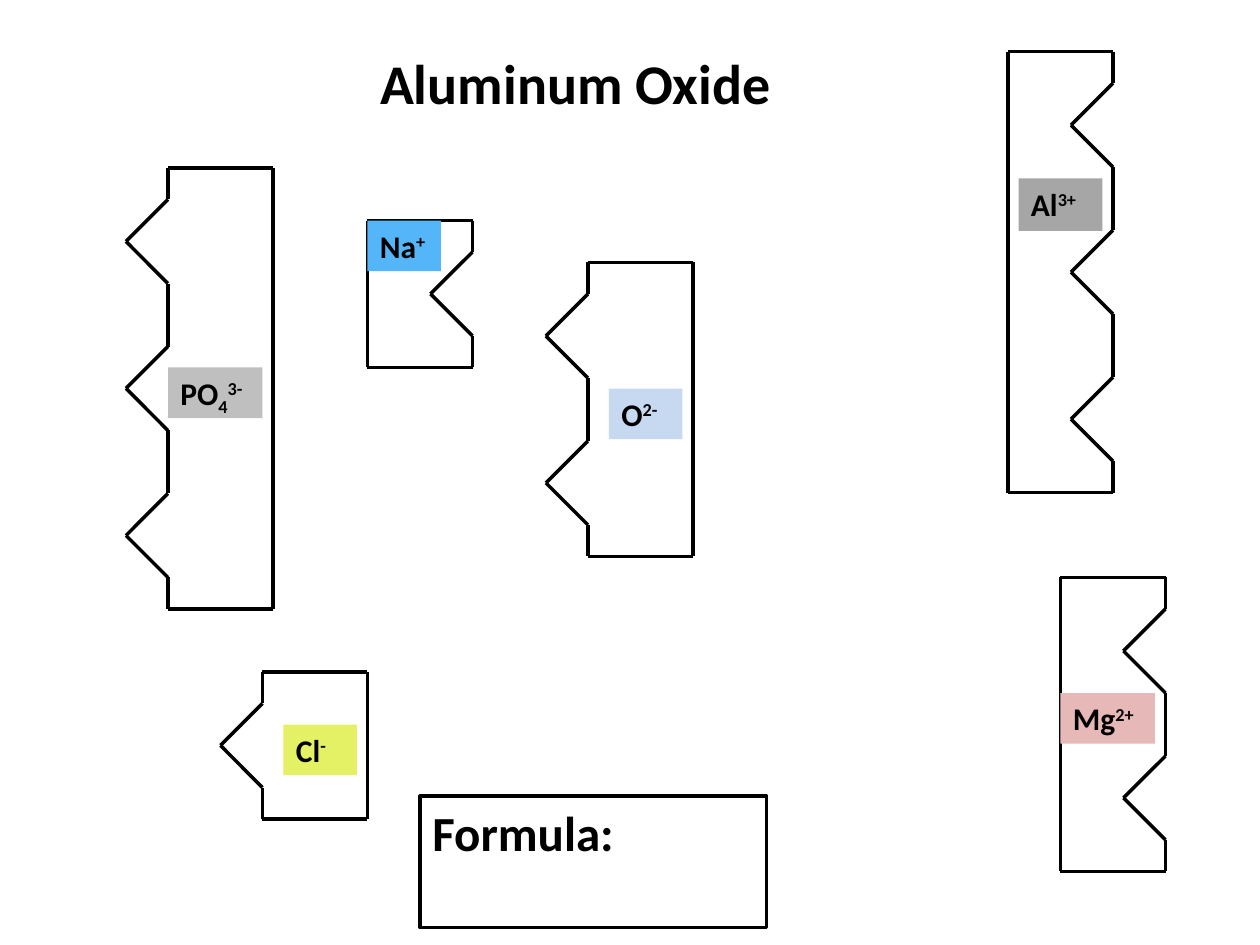
from lxml import etree
from pptx import Presentation
from pptx.dml.color import RGBColor
from pptx.enum.shapes import MSO_CONNECTOR
from pptx.enum.text import MSO_ANCHOR, MSO_AUTO_SIZE, PP_ALIGN
from pptx.oxml.ns import qn
from pptx.util import Pt

STRAIGHT = MSO_CONNECTOR.STRAIGHT
TOP = MSO_ANCHOR.TOP
FIXED_SIZE = MSO_AUTO_SIZE.NONE
LEFT = PP_ALIGN.LEFT

FONT = "Calibri"
BLACK = "000000"
LINE_WIDTH = 2
SUPER, SUB = 30, -25

UNIT = 84    # height of one charge unit
BODY = 60    # distance from the toothed edge to the back
STUB = 18    # straight edge above and below each tooth
TOOTH = 24   # depth of a tooth, and half its height
CATION, ANION = -1, 1  # side of the toothed edge on which the back lies

# toothed edge x, top, charge, side, label box, label colour, label runs
IONS = [
    (150, 384, 1, ANION, (162, 414, 42, 29), "E4F165",
     [("Cl", 0), ("-", SUPER)]),
    (336, 150, 2, ANION, (348, 222, 42, 29), "C6D9F1",
     [("O", 0), ("2-", SUPER)]),
    (666, 330, 2, CATION, (606, 396, 54, 29), "E6B9B8",
     [("Mg", 0), ("2+", SUPER)]),
    (270, 126, 1, CATION, (210, 126, 42, 29), "54B6F8",
     [("Na", 0), ("+", SUPER)]),
    (636, 29.5, 3, CATION, (582, 102, 48, 30), "A6A6A6",
     [("Al", 0), ("3+", SUPER)]),
    (96, 96, 3, ANION, (96, 210, 54, 29), "BFBFBF",
     [("PO", 0), ("4", SUB), ("3-", SUPER)]),
]


def color(hex_string):
    return RGBColor.from_string(hex_string)


def write_text(shape, runs, size):
    """Fill the shape with bold runs, each a pair of text and baseline shift in percent."""
    frame = shape.text_frame
    frame.word_wrap = True
    frame.auto_size = FIXED_SIZE
    frame.vertical_anchor = TOP
    paragraph = frame.paragraphs[0]
    paragraph.alignment = LEFT
    for text, baseline in runs:
        run = paragraph.add_run()
        run.text = text
        run.font.name = FONT
        run.font.size = Pt(size)
        run.font.bold = True
        run.font.color.rgb = color(BLACK)
        if baseline:
            run.font._element.set("baseline", str(baseline * 1000))


def add_title(slide, text, box):
    title = slide.shapes.title
    title.left, title.top, title.width, title.height = map(Pt, box)
    write_text(title, [(text, 0)], 32)


def add_formula_box(slide, text, box):
    formula = slide.shapes.add_textbox(*map(Pt, box))
    formula.line.color.rgb = color(BLACK)
    formula.line.width = Pt(LINE_WIDTH)
    write_text(formula, [(text, 0)], 28)


def add_line(shapes, start, end):
    line = shapes.add_connector(STRAIGHT, *map(Pt, (*start, *end)))
    line.line.color.rgb = color(BLACK)
    line.line.width = Pt(LINE_WIDTH)
    etree.SubElement(line._element.spPr, qn("a:effectLst"))


def add_ion_piece(slide, edge, top, charge, side, label_box, fill, runs):
    """Group a puzzle piece with one tooth or notch per unit of charge and its label."""
    shapes = slide.shapes.add_group_shape().shapes
    back = edge + side * BODY
    bottom = top + charge * UNIT

    for y in (top, bottom):
        add_line(shapes, (edge, y), (back, y))
    for unit in range(charge):
        start = top + unit * UNIT
        end = start + UNIT
        outline = [
            (edge, start),
            (edge, start + STUB),
            (edge - TOOTH, start + UNIT / 2),
            (edge, end - STUB),
            (edge, end),
        ]
        for point, next_point in zip(outline, outline[1:]):
            add_line(shapes, point, next_point)
        add_line(shapes, (back, start), (back, end))

    label = shapes.add_textbox(*map(Pt, label_box))
    label.fill.solid()
    label.fill.fore_color.rgb = color(fill)
    write_text(label, runs, 18)


def main():
    presentation = Presentation()
    presentation.slide_width = Pt(720)
    presentation.slide_height = Pt(540)
    slide = presentation.slides.add_slide(presentation.slide_layouts[5])

    add_title(slide, "Aluminum Oxide", (210, 24, 306, 46))
    add_formula_box(slide, "Formula:", (240, 455, 198, 75))
    for ion in IONS:
        add_ion_piece(slide, *ion)

    presentation.save("out.pptx")


if __name__ == "__main__":
    main()
